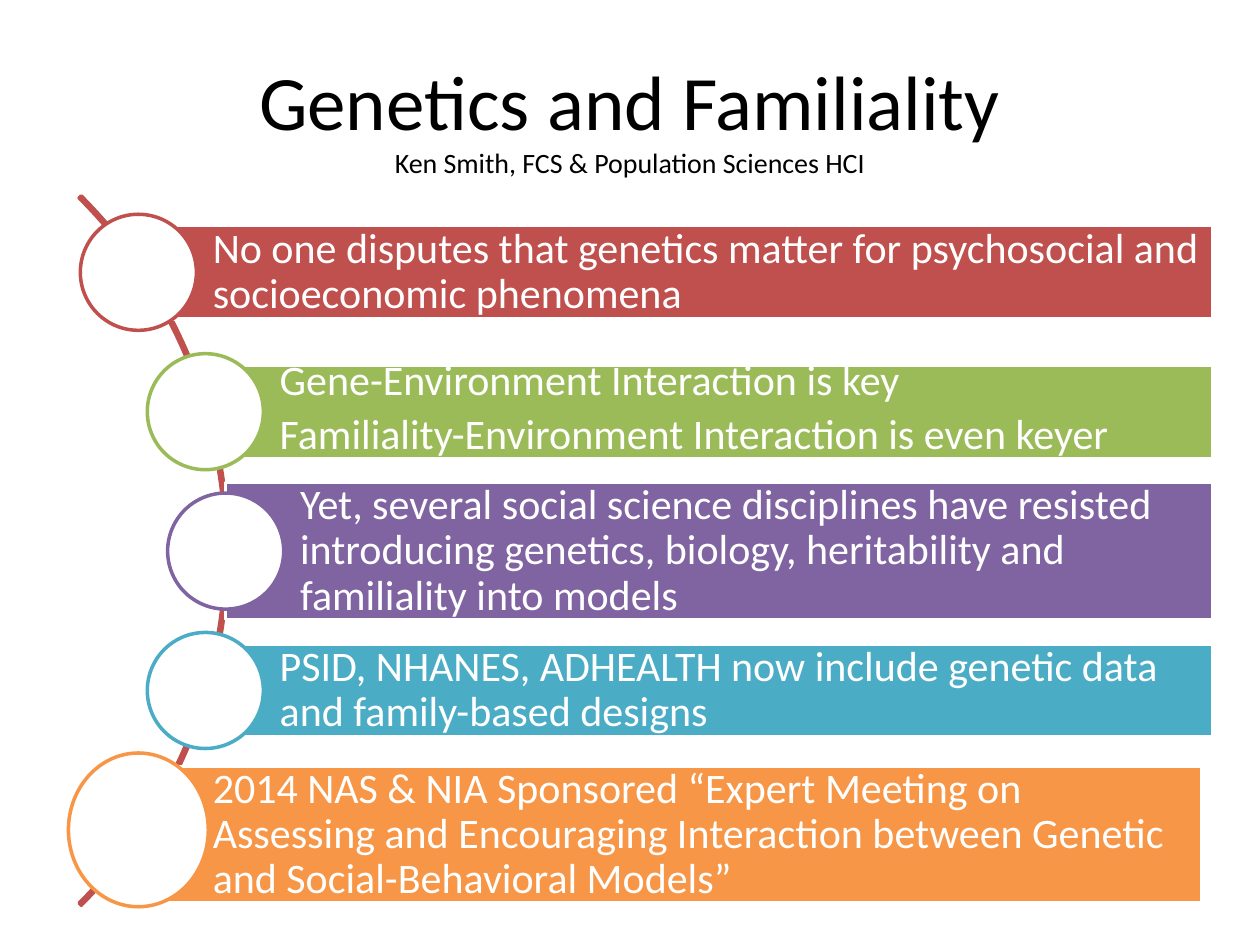
from dataclasses import dataclass
from pptx import Presentation
from pptx.dml.color import RGBColor as RGB
from pptx.enum.shapes import MSO_SHAPE as Kind
from pptx.enum.text import MSO_ANCHOR as Anchor, PP_ALIGN as Align
from pptx.util import Cm, Pt


@dataclass(frozen=True)
class Theme:
    font: str = "Calibri"
    black: str = "000000"
    white: str = "FFFFFF"
    red: str = "C0504D"
    green: str = "9BBB59"
    purple: str = "8064A2"
    teal: str = "4BACC6"
    orange: str = "F79646"
    title: int = 44
    byline: int = 16
    body: int = 24
    line: int = 2


theme = Theme()


def write(frame, text, size=theme.body, color=theme.white, align=Align.LEFT, space=0.9, after=8.4):
    para = frame.paragraphs[0]
    if para.runs:
        para = frame.add_paragraph()
    para.alignment = align
    para.line_spacing = space
    para.space_after = Pt(after)
    run = para.add_run()
    run.text = text
    run.font.name = theme.font
    run.font.size = Pt(size)
    run.font.color.rgb = RGB.from_string(color)


def draw(kind, left, top, width, height, fill, line):
    shape = slide.shapes.add_shape(kind, Cm(left), Cm(top), Cm(width), Cm(height))
    shape.shadow.inherit = False
    if fill:
        shape.fill.solid()
        shape.fill.fore_color.rgb = RGB.from_string(fill)
    else:
        shape.fill.background()
    shape.line.color.rgb = RGB.from_string(line)
    shape.line.width = Pt(theme.line)
    return shape


deck = Presentation()
deck.slide_width, deck.slide_height = Cm(25.4), Cm(19.05)
slide = deck.slides.add_slide(deck.slide_layouts[6])

title = slide.shapes.add_textbox(Cm(1.27), Cm(0.76), Cm(22.86), Cm(3.18)).text_frame
title.word_wrap = True
title.vertical_anchor = Anchor.MIDDLE
heads = [
    ("Genetics and Familiality", theme.title),
    ("Ken Smith, FCS & Population Sciences HCI", theme.byline),
]
for text, size in heads:
    write(title, text, size=size, color=theme.black, align=Align.CENTER, space=1.0, after=0)

arc = draw(Kind.BLOCK_ARC, -15.62, 0.99, 20.22, 20.22, None, theme.red)
for spot, value in enumerate([189, 27, 0.003]):
    arc.adjustments[spot] = value

first, pitch = 5.49, 2.81
edge = 24.45
short, tall = 1.88, 2.76
disc = 2.34
items = [
    (theme.red, 2.79, short, 0.9,
     ["No one disputes that genetics matter for psychosocial and socioeconomic phenomena"]),
    (theme.green, 4.14, short, Pt(22),
     ["Gene-Environment Interaction is key", "Familiality-Environment Interaction is even keyer"]),
    (theme.purple, 4.55, tall, 0.9,
     ["Yet, several social science disciplines have resisted introducing genetics, "
      "biology, heritability and familiality into models"]),
    (theme.teal, 4.14, short, 0.9,
     ["PSID, NHANES, ADHEALTH now include genetic data and family-based designs"]),
    (theme.orange, 2.79, tall, 0.9,
     ["2014 NAS & NIA Sponsored “Expert Meeting on Assessing and Encouraging "
      "Interaction between Genetic and Social-Behavioral Models”"]),
]
for row, (color, left, height, space, lines) in enumerate(items):
    mid = first + row * pitch
    last = row == len(items) - 1
    right, drop = (24.23, 0.1) if last else (edge, 0)
    wide, high = (2.82, 3.1) if last else (disc, disc)

    bar = draw(Kind.RECTANGLE, left, mid + drop - height / 2, right - left, height, color, theme.white)
    frame = bar.text_frame
    frame.word_wrap = True
    frame.vertical_anchor = Anchor.MIDDLE
    frame.margin_left = Cm(1.5)
    frame.margin_top = frame.margin_right = frame.margin_bottom = Cm(0.17)
    for text in lines:
        write(frame, text, space=space)

    draw(Kind.OVAL, left - wide / 2, mid - high / 2, wide, high, theme.white, color)

deck.save("out.pptx")
